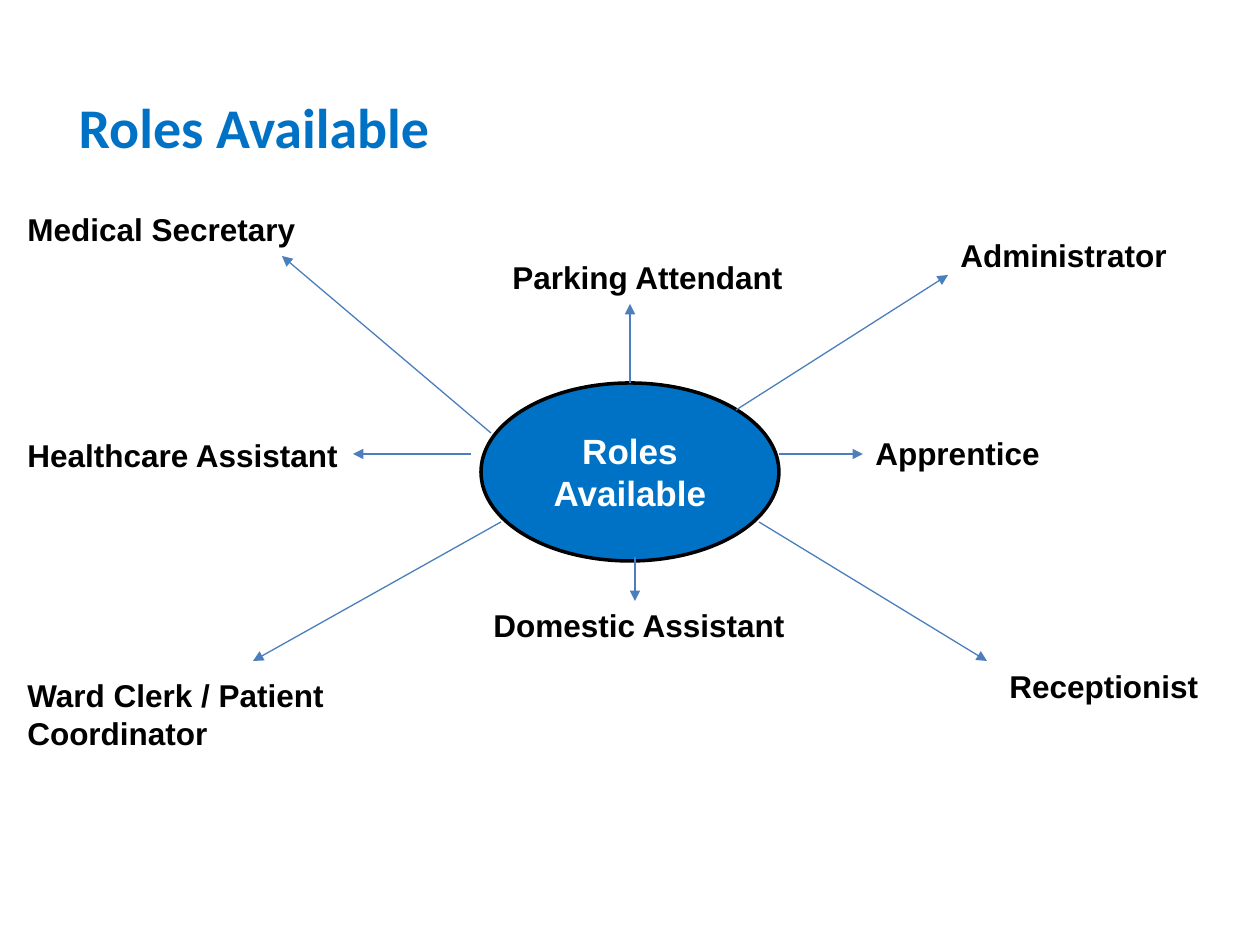
from lxml import etree
from pptx import Presentation
from pptx.dml.color import RGBColor
from pptx.enum.shapes import MSO_CONNECTOR, MSO_SHAPE
from pptx.enum.text import MSO_ANCHOR, MSO_AUTO_SIZE, PP_ALIGN
from pptx.oxml.ns import qn
from pptx.util import Emu, Pt

STRAIGHT, ELLIPSE = MSO_CONNECTOR.STRAIGHT, MSO_SHAPE.OVAL
TOP, MIDDLE = MSO_ANCHOR.TOP, MSO_ANCHOR.MIDDLE
LEFT, CENTER = PP_ALIGN.LEFT, PP_ALIGN.CENTER
NO_FIT = MSO_AUTO_SIZE.NONE

# Content: lengths in px
HEADING = "Roles Available"
HEADING_BOX = (66, 86, 743, 79)
HUB_BOX = (481, 383, 298, 178)
LABEL_HEIGHT = 50
# role, label (left, top, width), arrow start, arrow end
ROLES = [
    ("Medical Secretary", (15, 204, 297), (491, 433), (282, 256)),
    ("Parking Attendant", (500, 252, 299), (630, 383), (630, 304)),
    ("Administrator", (948, 230, 236), (736, 410), (948, 275)),
    ("Apprentice", (863, 428, 212), (779, 454), (863, 454)),
    ("Receptionist", (997, 661, 228), (759, 522), (987, 661)),
    ("Domestic Assistant", (481, 600, 333), (635, 557), (635, 601)),
    ("Ward Clerk / Patient Coordinator", (15, 670, 456), (501, 522), (253, 661)),
    ("Healthcare Assistant", (15, 430, 348), (471, 454), (353, 454)),
]

THEME = {
    "blue": RGBColor(0x00, 0x72, 0xC6),
    "arrow": RGBColor(0x4B, 0x7E, 0xBC),
    "black": RGBColor(0, 0, 0),
    "white": RGBColor(255, 255, 255),
    "heading_font": "Calibri",
    "font": "Arial",
    "heading_size": Pt(32),
    "hub_size": Pt(20),
    "label_size": Pt(18),
    "hub_line": Pt(2),
    "arrow_line": Pt(0.75),
}


def px(*lengths):
    return [Emu(round(length * 914400 / 126)) for length in lengths]


def write(shape, text, size, color, font=THEME["font"], align=LEFT, anchor=TOP):
    frame = shape.text_frame
    frame.text = text
    frame.word_wrap = True
    frame.auto_size = NO_FIT
    frame.vertical_anchor = anchor
    paragraph = frame.paragraphs[0]
    paragraph.alignment = align
    run_font = paragraph.runs[0].font
    run_font.name, run_font.size, run_font.bold = font, size, True
    run_font.color.rgb = color


def add_arrow(shapes, start, end):
    arrow = shapes.add_connector(STRAIGHT, *px(*start, *end))
    arrow.line.color.rgb = THEME["arrow"]
    arrow.line.width = THEME["arrow_line"]
    etree.SubElement(arrow.line._get_or_add_ln(), qn("a:tailEnd"), type="triangle")
    etree.SubElement(arrow._element.spPr, qn("a:effectLst"))


def main():
    prs = Presentation()
    prs.slide_width, prs.slide_height = px(1260, 945)
    slide = prs.slides.add_slide(prs.slide_layouts[5])
    shapes = slide.shapes

    # Heading
    heading = shapes.title
    heading.left, heading.top, heading.width, heading.height = px(*HEADING_BOX)
    write(heading, HEADING, THEME["heading_size"], THEME["blue"], THEME["heading_font"])

    # Hub
    hub = shapes.add_shape(ELLIPSE, *px(*HUB_BOX))
    hub.shadow.inherit = False
    hub.fill.solid()
    hub.fill.fore_color.rgb = THEME["blue"]
    hub.line.color.rgb = THEME["black"]
    hub.line.width = THEME["hub_line"]
    write(hub, HEADING, THEME["hub_size"], THEME["white"], align=CENTER, anchor=MIDDLE)

    # Roles around the hub
    for role, label_place, start, end in ROLES:
        add_arrow(shapes, start, end)
        label = shapes.add_textbox(*px(*label_place, LABEL_HEIGHT))
        write(label, role, THEME["label_size"], THEME["black"])

    # The two-line label needs room for its second line
    label.top = label.top
    prs.save("out.pptx")


if __name__ == "__main__":
    main()
